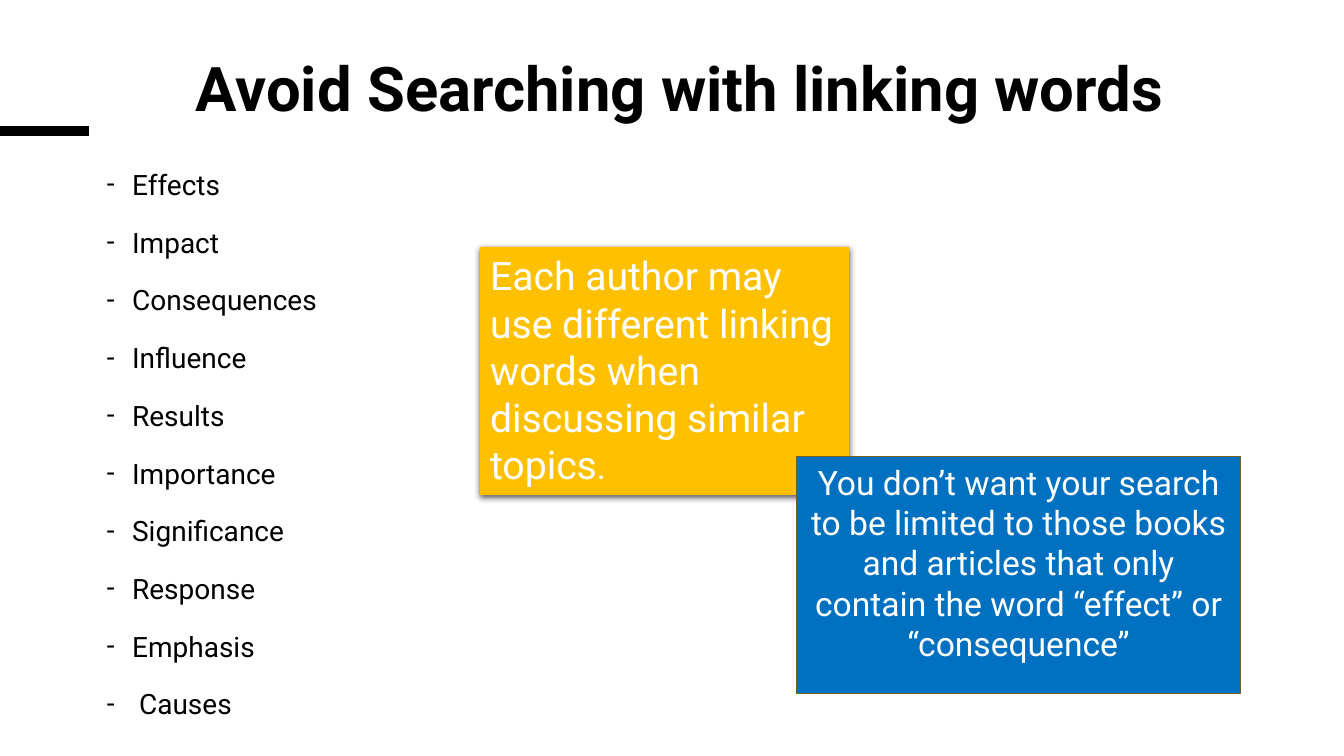
from lxml import etree
from pptx import Presentation
from pptx.dml.color import RGBColor
from pptx.enum import shapes, text
from pptx.oxml import ns, parse_xml
from pptx.util import Cm, Pt

BLACK = RGBColor(0x00, 0x00, 0x00)
WHITE = RGBColor(0xFF, 0xFF, 0xFF)
AMBER = RGBColor(0xFF, 0xC0, 0x00)
BLUE = RGBColor(0x00, 0x70, 0xC0)
BRONZE = RGBColor(0x75, 0x60, 0x29)
FONT = "Roboto"
LINKING_WORDS = ["Effects", "Impact", "Consequences", "Influence", "Results",
                 "Importance", "Significance", "Response", "Emphasis", " Causes"]
SOFT_SHADOW = (
    f'<a:effectLst {ns.nsdecls("a")}>'
    '<a:outerShdw blurRad="57150" dist="19050" dir="5400000" algn="ctr" rotWithShape="0">'
    '<a:srgbClr val="000000"><a:alpha val="63000"/></a:srgbClr>'
    '</a:outerShdw></a:effectLst>'
)


def place(shape, box):
    shape.left, shape.top, shape.width, shape.height = (Cm(length) for length in box)


def format_span(span, size, color, bold=False):
    span.font.name = FONT
    span.font.size = Pt(size)
    span.font.color.rgb = color
    span.font.bold = bold


def add_accent(page, box):
    left, top, width, height = box
    accent = page.shapes.add_connector(
        shapes.MSO_CONNECTOR.STRAIGHT,
        Cm(left), Cm(top), Cm(left + width), Cm(top + height))
    accent.line.color.rgb = BLACK
    accent.line.width = Pt(6.75)
    etree.SubElement(accent._element.spPr, ns.qn("a:effectLst"))


def fill_title(page, box):
    title = page.shapes.title
    place(title, box)
    frame = title.text_frame
    frame.text = "Avoid Searching with linking words"
    frame.auto_size = text.MSO_AUTO_SIZE.NONE
    frame.vertical_anchor = text.MSO_ANCHOR.TOP
    para = frame.paragraphs[0]
    para.alignment = text.PP_ALIGN.CENTER
    para.line_spacing = 0.85
    format_span(para.runs[0], 44, BLACK, bold=True)


def fill_word_list(page, box):
    body = page.placeholders[1]
    place(body, box)
    frame = body.text_frame
    frame.text = "\n".join(LINKING_WORDS)
    frame.auto_size = text.MSO_AUTO_SIZE.NONE
    frame.vertical_anchor = text.MSO_ANCHOR.TOP
    for para in frame.paragraphs:
        para.line_spacing = 1.3
        para.space_before = Pt(10)
        format_span(para.runs[0], 20, BLACK)
        properties = para._p.get_or_add_pPr()
        properties.set("marL", str(Cm(0.635)))
        properties.set("indent", str(-Cm(0.635)))
        etree.SubElement(properties, ns.qn("a:buFont"), typeface=FONT)
        etree.SubElement(properties, ns.qn("a:buChar"), char="-")


def add_note(page, box, fill, alignment, spans):
    note = page.shapes.add_shape(shapes.MSO_SHAPE.RECTANGLE, 0, 0, 0, 0)
    place(note, box)
    note.shadow.inherit = False
    note.fill.solid()
    note.fill.fore_color.rgb = fill
    note.line.fill.background()
    frame = note.text_frame
    frame.word_wrap = True
    frame.vertical_anchor = text.MSO_ANCHOR.TOP
    para = frame.paragraphs[0]
    para.alignment = alignment
    for words, size in spans:
        span = para.add_run()
        span.text = words
        format_span(span, size, WHITE)
    return note


def add_author_note(page, box):
    note = add_note(page, box, AMBER, text.PP_ALIGN.LEFT, [
        ("Each author may use different linking words when discussing similar topics", 28),
        (".", 24)])
    properties = note._element.spPr
    properties.replace(properties.find(ns.qn("a:effectLst")), parse_xml(SOFT_SHADOW))


def add_search_note(page, box):
    note = add_note(page, box, BLUE, text.PP_ALIGN.CENTER, [
        ("You don’t want your search to be limited to those books and articles "
         "that only contain the word “effect” or “consequence”", 24)])
    note.line.color.rgb = BRONZE
    note.line.width = Pt(0.5)


def main():
    deck = Presentation()
    deck.slide_width, deck.slide_height = Cm(33.87), Cm(19.05)
    page = deck.slides.add_slide(deck.slide_layouts[1])
    add_accent(page, (0, 3.3, 2.24, 0))
    fill_title(page, (3, 1.42, 28.27, 2.74))
    fill_word_list(page, (2.44, 3.84, 18.03, 13.64))
    add_author_note(page, (12.1, 6.22, 9.3, 6.25))
    add_search_note(page, (20.07, 11.51, 11.2, 5.97))
    deck.save("out.pptx")


if __name__ == "__main__":
    main()
